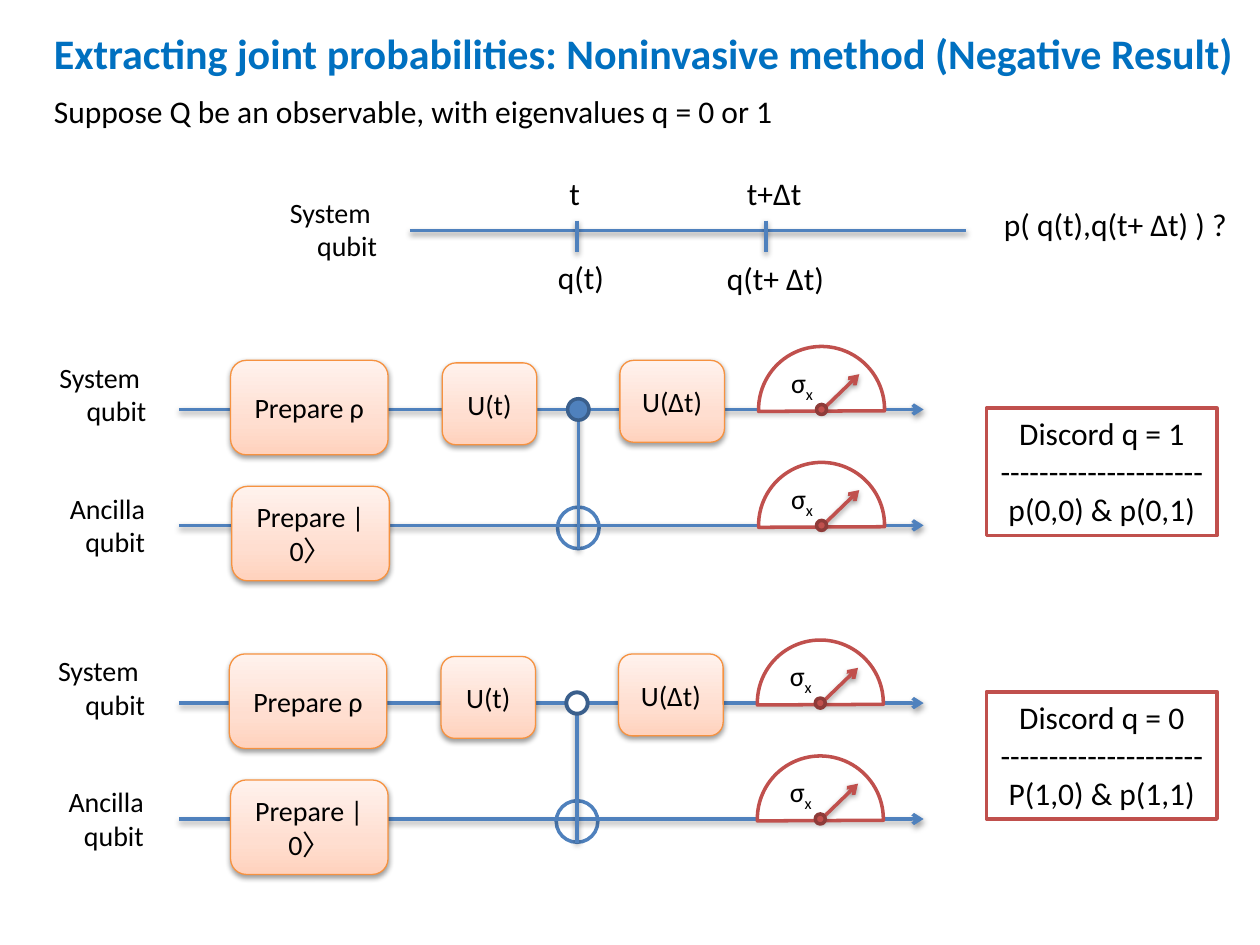
from copy import deepcopy
from dataclasses import dataclass

from pptx import Presentation
from pptx.dml.color import RGBColor
from pptx.enum.shapes import MSO_CONNECTOR, MSO_SHAPE
from pptx.enum.text import MSO_ANCHOR, MSO_AUTO_SIZE, PP_ALIGN
from pptx.oxml import parse_xml
from pptx.oxml.ns import nsdecls
from pptx.util import Inches, Pt


@dataclass(frozen=True)
class Theme:
    font: str = "Calibri"
    title: str = "0070C0"
    text: str = "000000"
    white: str = "FFFFFF"
    blue: str = "4F81BD"
    dark_blue: str = "3A5F8C"
    red: str = "C0504D"
    dark_red: str = "8E3B39"
    orange: str = "F69240"
    gate: tuple = ((0, "FFD2BD"), (0.35, "FFDED0"), (1, "FFF2ED"))
    title_size: int = 24
    body: int = 18
    label: int = 16
    stroke: float = 2
    thin: float = 0.75


T = Theme()
SYSTEM = ["System ", "qubit"]
ANCILLA = ["Ancilla", "qubit"]
HEADINGS = [
    ("Extracting joint probabilities: Noninvasive method (Negative Result)",
     (0.33, 0.17, 9.8, 0.5), dict(size=T.title_size, color=T.title, bold=True)),
    ("Suppose Q be an observable, with eigenvalues q = 0 or 1", (0.33, 0.68, 5.98, 0.4), {}),
]
TIMELINE_LABELS = [
    ("t", (4.42, 1.33, 0.29, 0.4), {}),
    ("t+Δt", (5.83, 1.33, 0.65, 0.4), {}),
    (SYSTEM, (2.17, 1.5, 0.92, 0.64), dict(size=T.label, align=PP_ALIGN.RIGHT)),
    ("q(t)", (4.33, 2, 0.57, 0.4), {}),
    ("q(t+ Δt)", (5.67, 2.01, 1.12, 0.4), dict(wrap=True)),
    ("p( q(t),q(t+ Δt) ) ?", (7.87, 1.58, 2.07, 0.4), {}),
]
TICKS = [4.58, 6.08]
GATES = [
    ("U(Δt)", (4.92, -0.39, 0.83, 0.65)),
    ("Prepare ρ", (1.83, -0.39, 1.25, 0.75)),
    ("Prepare |0〉", (1.84, 0.61, 1.25, 0.75)),
    ("U(t)", (3.51, -0.37, 0.75, 0.65)),
]
QUBITS = [(SYSTEM, (0.34, -0.44, 0.92, 0.64)), (ANCILLA, (0.42, 0.6, 0.83, 0.64))]
CIRCUITS = [
    dict(y=3.25, dx=0, control=T.blue, ring=T.stroke, box_y=3.24,
         result=["Discord q = 1", "-" * 21, "p(0,0) & p(0,1)"]),
    dict(y=5.58, dx=-0.01, control=T.white, ring=2.25, box_y=5.49,
         result=["Discord q = 0", "-" * 21, "P(1,0) & p(1,1)"]),
]
ROW_GAP = 0.92
WIRE = (1.42, 7.33)
CONTROL_X = 4.59
METER_X = 6.52

prs = Presentation()
prs.slide_width, prs.slide_height = Inches(10), Inches(7.5)
s = prs.slides.add_slide(prs.slide_layouts[6])


def rgb(value):
    return RGBColor.from_string(value)


def add_shadow(sp):
    sp._element.spPr.append(parse_xml(
        f'<a:effectLst {nsdecls("a")}><a:outerShdw blurRad="40000" dist="20000" '
        'dir="5400000" rotWithShape="0"><a:srgbClr val="000000"><a:alpha val="38000"/>'
        '</a:srgbClr></a:outerShdw></a:effectLst>'))


def write(sp, text, *, size=T.body, color=T.text, bold=False, align=PP_ALIGN.LEFT,
          wrap=False, grow=True, anchor=MSO_ANCHOR.TOP, sub=""):
    tf = sp.text_frame
    tf.word_wrap = wrap
    tf.auto_size = MSO_AUTO_SIZE.SHAPE_TO_FIT_TEXT if grow else MSO_AUTO_SIZE.NONE
    tf.vertical_anchor = anchor
    lines = [text] if isinstance(text, str) else text
    for i, line in enumerate(lines):
        p = tf.paragraphs[0] if i == 0 else tf.add_paragraph()
        p.alignment = align
        for part in filter(None, (line, sub)):
            r = p.add_run()
            r.text = part
            r.font.name, r.font.size, r.font.bold = T.font, Pt(size), bold
            r.font.color.rgb = rgb(color)
            if part == sub:
                r.font._element.set("baseline", "-25000")


def label(text, box, **fmt):
    write(s.shapes.add_textbox(*map(Inches, box)), text, **fmt)


def shape(kind, box, fill, line, width=T.stroke):
    sp = s.shapes.add_shape(kind, *map(Inches, box))
    sp.shadow.inherit = False
    sp.fill.solid()
    sp.fill.fore_color.rgb = rgb(fill)
    sp.line.color.rgb = rgb(line)
    sp.line.width = Pt(width)
    return sp


def circle(x, y, d, fill, line, width=T.stroke):
    return shape(MSO_SHAPE.OVAL, (x - d / 2, y - d / 2, d, d), fill, line, width)


def line(x1, y1, x2, y2, color=T.blue, arrow=False):
    cxn = s.shapes.add_connector(MSO_CONNECTOR.STRAIGHT, *map(Inches, (x1, y1, x2, y2)))
    cxn.line.color.rgb = rgb(color)
    cxn.line.width = Pt(T.stroke)
    if arrow:
        cxn.line._get_or_add_ln().append(
            parse_xml(f'<a:tailEnd {nsdecls("a")} type="arrow"/>'))
    add_shadow(cxn)


def gate(text, box):
    sp = s.shapes.add_shape(MSO_SHAPE.ROUNDED_RECTANGLE, *map(Inches, box))
    sp.fill.gradient()
    sp.fill.gradient_angle = 90
    first = sp.fill.gradient_stops[0]._gs
    first.addnext(deepcopy(first))
    for stop, (position, color) in zip(sp.fill.gradient_stops, T.gate):
        stop.position = position
        stop.color.rgb = rgb(color)
    sp.line.color.rgb = rgb(T.orange)
    sp.line.width = Pt(T.thin)
    add_shadow(sp)
    write(sp, text, size=T.label, align=PP_ALIGN.CENTER, wrap=True, grow=False,
          anchor=MSO_ANCHOR.MIDDLE)


def meter(x, y):
    dial = shape(MSO_SHAPE.CHORD, (x - 0.5, y - 0.5, 1, 1), T.white, T.red)
    dial.rotation = 105.7
    dial.adjustments[0], dial.adjustments[1] = 43.52, 153.32
    line(x, y + 0.01, x + 0.3, y - 0.28, T.red, arrow=True)
    circle(x, y, 0.08, T.red, T.dark_red)
    label("σ", (x - 0.34, y - 0.4, 0.4, 0.37), size=T.label, sub="x")


def circuit(y, dx, control, ring, box_y, result):
    rows = [y, y + ROW_GAP]
    x = CONTROL_X + dx
    circle(x, rows[1] + 0.02, 0.33, T.white, T.blue)
    for row in rows:
        line(WIRE[0], row, WIRE[1], row, arrow=True)
        meter(METER_X + dx, row)
    line(x, y + 0.02, x, y + 1.11)
    for text, (left, top, w, h) in GATES:
        gate(text, (left + dx, y + top, w, h))
    for text, (left, top, w, h) in QUBITS:
        label(text, (left + dx, y + top, w, h), size=T.label, align=PP_ALIGN.RIGHT)
    circle(x, y, 0.17, control, T.dark_blue, ring)
    box = shape(MSO_SHAPE.RECTANGLE, (7.83, box_y, 1.83, 1.01), T.white, T.red)
    write(box, result, align=PP_ALIGN.CENTER, wrap=True)


for text, box, fmt in HEADINGS:
    label(text, box, **fmt)
line(3.25, 1.83, 7.67, 1.83)
for x in TICKS:
    line(x, 1.75, x, 2)
for text, box, fmt in TIMELINE_LABELS:
    label(text, box, **fmt)
for c in CIRCUITS:
    circuit(**c)

prs.save("out.pptx")
